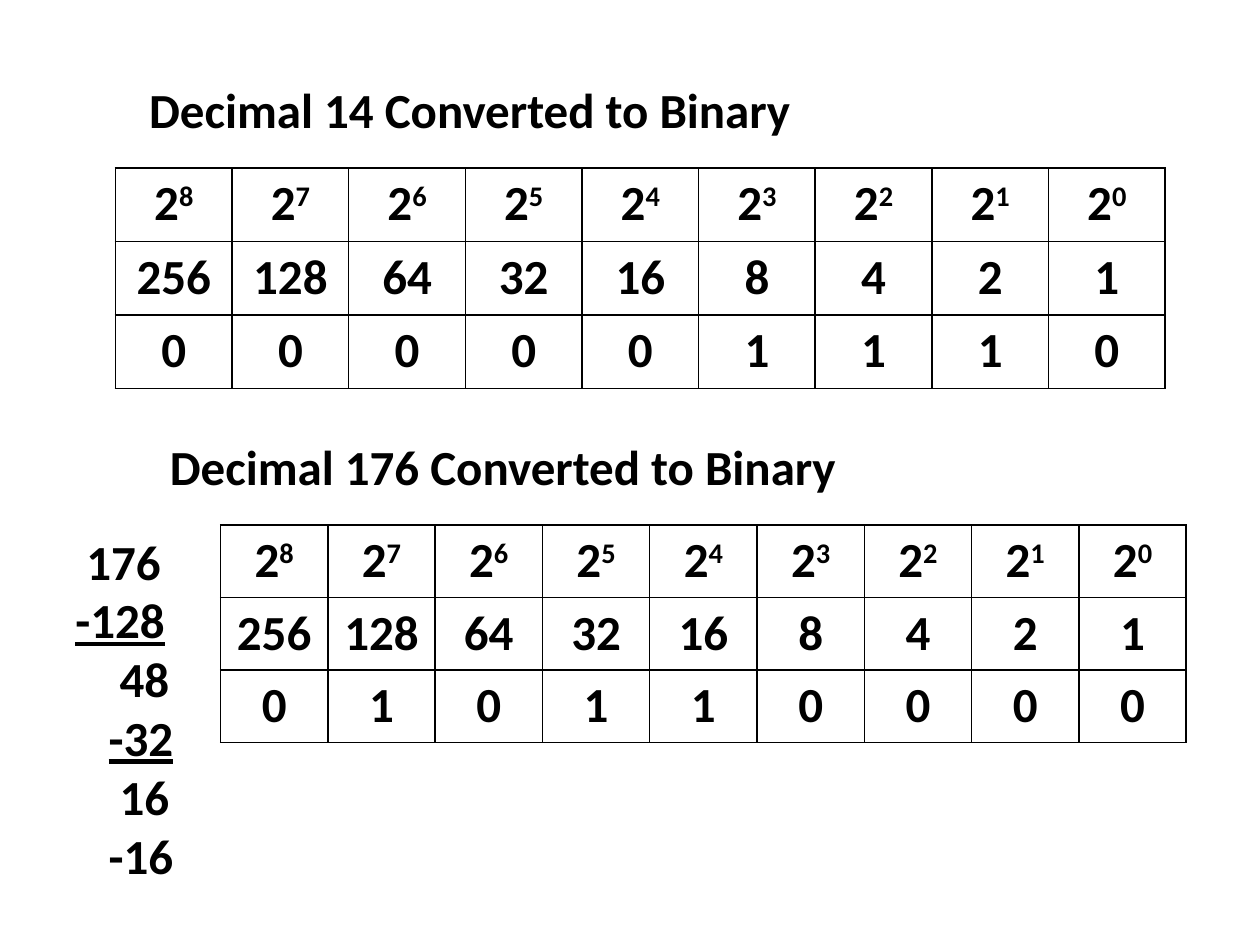
"""Build a slide that turns two decimal numbers into binary."""
from lxml.etree import SubElement as Sub
from pptx import Presentation as Deck
from pptx.dml.color import RGBColor as Color
from pptx.enum.text import MSO_ANCHOR as Anchor, MSO_AUTO_SIZE as Fit, PP_ALIGN as Align
from pptx.oxml.ns import qn
from pptx.util import Pt

BLACK = "000000"
FONT = {"name": "Calibri", "size": Pt(28), "bold": True}
FRAME = {"word_wrap": True, "auto_size": Fit.NONE, "vertical_anchor": Anchor.TOP}
BITS = 9


def paint(target, shade):
    target.rgb = Color.from_string(shade)


def write(para, text, **extra):
    run = para.add_run()
    run.text = text
    for key, value in {**FONT, **extra}.items():
        setattr(run.font, key, value)
    paint(run.font.color, BLACK)
    return run


deck = Deck()
deck.slide_width, deck.slide_height = Pt(720), Pt(540)
slide = deck.slides.add_slide(deck.slide_layouts[5])
shapes = slide.shapes

heads = [
    (shapes.title, "Decimal 14 Converted to Binary", 78, 42),
    (shapes.add_textbox(0, 0, 0, 0), "Decimal 176 Converted to Binary", 90, 246),
]
for box, text, left, top in heads:
    place = {"left": Pt(left), "top": Pt(top), "width": Pt(546), "height": Pt(41)}
    for key, value in place.items():
        setattr(box, key, value)
    for key, value in FRAME.items():
        setattr(box.text_frame, key, value)
    para = box.text_frame.paragraphs[0]
    para.alignment = Align.LEFT
    write(para, text)

grids = [(14, 66, 96, 600, 126), (176, 126, 300, 552, 122.4)]
for number, left, top, width, height in grids:
    table = shapes.add_table(3, BITS, Pt(left), Pt(top), Pt(width), Pt(height)).table
    table.first_row = table.horz_banding = False
    for row in table.rows:
        row.height = Pt(height / 3)
    for col in range(BITS):
        table.columns[col].width = Pt(width / BITS)
        power = BITS - 1 - col
        texts = ["2", str(2 ** power), str(number >> power & 1)]
        for row, text in enumerate(texts):
            cell = table.cell(row, col)
            para = cell.text_frame.paragraphs[0]
            para.alignment = Align.CENTER
            write(para, text)
            if row == 0:
                raised = write(para, str(power))
                raised._r.get_or_add_rPr().set("baseline", "30000")
            props = cell._tc.get_or_add_tcPr()
            for side in ("lnL", "lnR", "lnT", "lnB"):
                line = Sub(props, qn(f"a:{side}"), w=str(Pt(1)))
                fill = Sub(line, qn("a:solidFill"))
                Sub(fill, qn("a:srgbClr"), val=BLACK)
            cell.fill.background()

sums = shapes.add_textbox(Pt(36), Pt(300), Pt(90), Pt(232.6)).text_frame
for key, value in FRAME.items():
    setattr(sums, key, value)
steps = [("176", 6.3, False), ("-128", 0, True), ("48", 25.3, False),
         ("-32", 19, True), ("16", 25.3, False), ("-16", 19, False)]
for row, (text, indent, under) in enumerate(steps):
    para = sums.add_paragraph() if row else sums.paragraphs[0]
    if indent:
        stops = Sub(para._p.get_or_add_pPr(), qn("a:tabLst"))
        Sub(stops, qn("a:tab"), pos=str(Pt(indent)), algn="l")
        text = "\t" + text
    write(para, text, underline=under)

deck.save("out.pptx")
